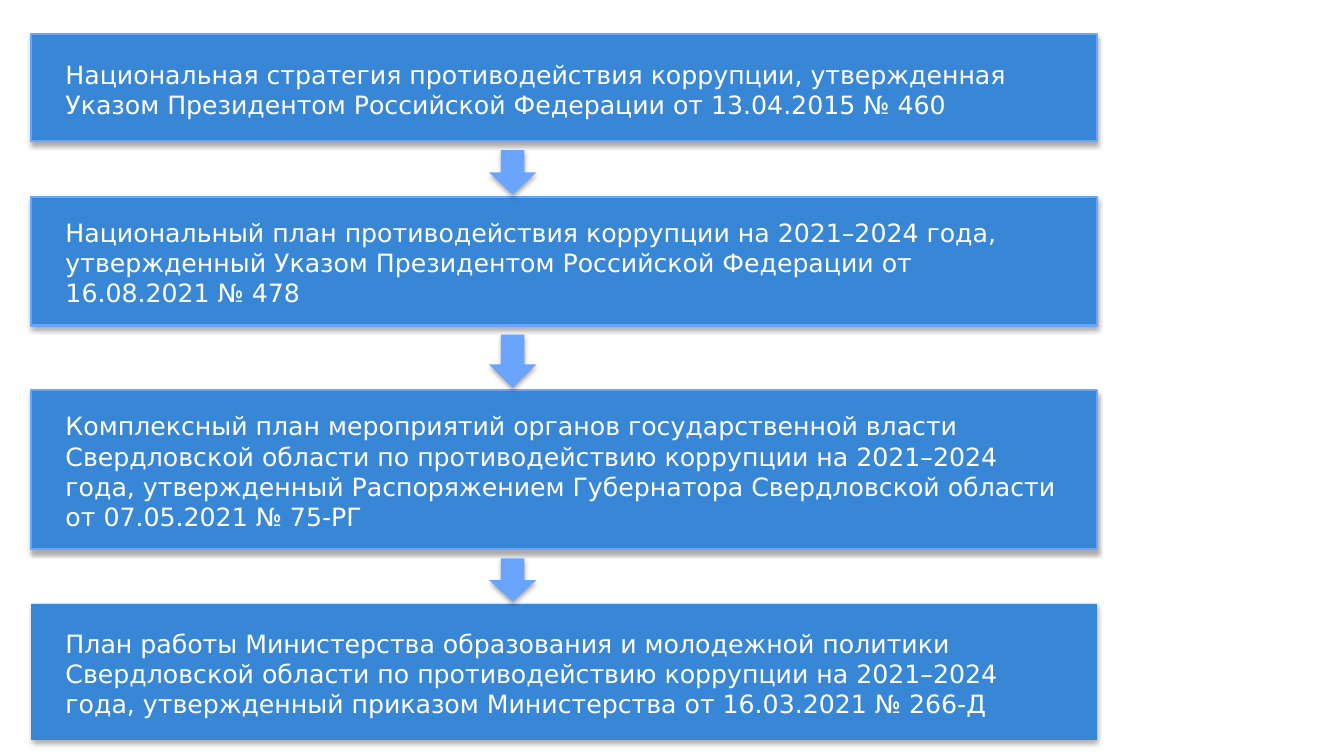
from itertools import pairwise

from lxml.etree import SubElement
from pptx import Presentation
from pptx.dml.color import RGBColor
from pptx.enum.shapes import MSO_SHAPE
from pptx.enum.text import MSO_ANCHOR, PP_ALIGN
from pptx.oxml.ns import qn
from pptx.util import Inches, Pt

COLORS = {"box": "3887D6", "accent": "69A5FF", "text": "FFFFFF", "shadow": "000000"}
FONT = "DejaVu Sans"

LEFT, WIDTH = 0.31, 10.57
TEXT_INSET = 0.34
ARROW_LEFT, ARROW_WIDTH = 4.85, 0.47
GAP_ABOVE, GAP_BELOW = 0.09, 0.02  # space around each arrow

# Top, height, outlined, paragraphs
STEPS = [
    (0.34, 1.06, True, [
        "Национальная стратегия противодействия коррупции, утвержденная "
        "Указом Президентом Российской Федерации от 13.04.2015 № 460"]),
    (1.95, 1.28, True, [
        "Национальный план противодействия коррупции на 2021–2024 года, "
        "утвержденный Указом Президентом Российской Федерации от "
        "16.08.2021 № 478"]),
    (3.87, 1.58, True, [
        "Комплексный план мероприятий органов государственной власти "
        "Свердловской области по противодействию коррупции на 2021–2024 "
        "года, утвержденный Распоряжением Губернатора Свердловской области",
        "от 07.05.2021 № 75-РГ"]),
    (5.99, 1.35, False, [
        "План работы Министерства образования и молодежной политики "
        "Свердловской области по противодействию коррупции на 2021–2024 "
        "года, утвержденный приказом Министерства от 16.03.2021 № 266-Д"]),
]


def rgb(name):
    return RGBColor.from_string(COLORS[name])


def add_shadow(sp):
    sp.shadow.inherit = False
    effects = sp._element.spPr.find(qn("a:effectLst"))
    shadow = SubElement(effects, qn("a:outerShdw"), blurRad=str(Pt(3.5)),
                        dist=str(Pt(2.2)), dir="5400000", rotWithShape="0")
    color = SubElement(shadow, qn("a:srgbClr"), val=COLORS["shadow"])
    SubElement(color, qn("a:alpha"), val="32000")


def add_block(s, kind, left, top, width, height, fill, outlined=False):
    sp = s.shapes.add_shape(kind, Inches(left), Inches(top), Inches(width), Inches(height))
    sp.fill.solid()
    sp.fill.fore_color.rgb = rgb(fill)
    if outlined:
        sp.line.color.rgb = rgb("accent")
        sp.line.width = Pt(1.5)
    else:
        sp.line.fill.background()
    add_shadow(sp)
    return sp


def add_step(s, top, height, outlined, lines):
    sp = add_block(s, MSO_SHAPE.RECTANGLE, LEFT, top, WIDTH, height, "box", outlined)
    tf = sp.text_frame
    tf.word_wrap = True
    tf.vertical_anchor = MSO_ANCHOR.MIDDLE
    tf.margin_left = tf.margin_right = Inches(TEXT_INSET)
    # A slight top margin centres the text just below the middle
    tf.margin_top, tf.margin_bottom = Inches(0.07), Inches(0.04)
    tf.text = "\n".join(lines)
    for p in tf.paragraphs:
        p.alignment = PP_ALIGN.LEFT
        p.font.name = FONT
        p.font.size = Pt(18)
        p.font.color.rgb = rgb("text")


def add_arrow(s, upper_bottom, lower_top):
    top = upper_bottom + GAP_ABOVE
    add_block(s, MSO_SHAPE.DOWN_ARROW, ARROW_LEFT, top, ARROW_WIDTH,
              lower_top - GAP_BELOW - top, "accent")


def build_flow(s):
    # Document boxes from top to bottom
    for step in STEPS:
        add_step(s, *step)
    # One arrow in each gap
    for (top, height, *_), (next_top, *_) in pairwise(STEPS):
        add_arrow(s, top + height, next_top)


def main():
    prs = Presentation()
    prs.slide_width, prs.slide_height = Inches(13.33), Inches(7.5)
    s = prs.slides.add_slide(prs.slide_layouts[6])
    build_flow(s)
    prs.save("out.pptx")


if __name__ == "__main__":
    main()
